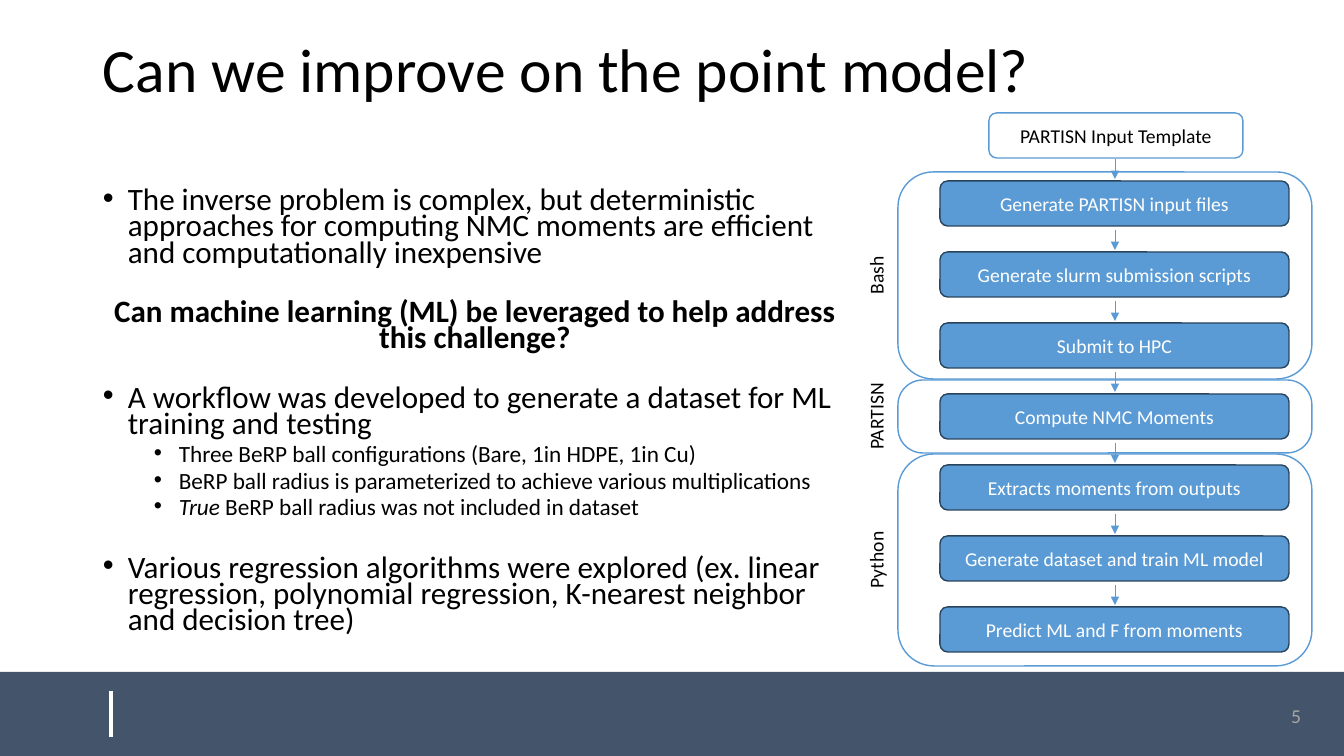
"""Build a slide on improving the point model, with bullets beside a workflow diagram."""
import lxml.etree
import pptx
import pptx.dml.color
import pptx.enum.shapes
import pptx.enum.text
import pptx.oxml.ns
import pptx.util

TITLE = "Can we improve on the point model?"
PAGE = "5"
POINT = dict(size=22.2, indent=25, bullet=True, spacing=0.7)
DETAIL = dict(size=16.6, indent=76, bullet=True, spacing=0.7, before=5)
QUESTION = dict(size=22.2, bold=True, align="CENTER", spacing=0.7, before=24)
BODY = [
    ("The inverse problem is complex, but deterministic approaches for computing "
     "NMC moments are efficient and computationally inexpensive", POINT),
    ("Can machine learning (ML) be leveraged to help address this challenge?", QUESTION),
    ("A workflow was developed to generate a dataset for ML training and testing",
     dict(POINT, before=24)),
    ("Three BeRP ball configurations (Bare, 1in HDPE, 1in Cu)", DETAIL),
    ("BeRP ball radius is parameterized to achieve various multiplications", DETAIL),
    (" BeRP ball radius was not included in dataset", dict(DETAIL, italic_lead="True")),
    ("Various regression algorithms were explored (ex. linear regression, "
     "polynomial regression, K-nearest neighbor and decision tree)",
     dict(POINT, before=27)),
]
TEMPLATE = "PARTISN Input Template"
STEPS = [
    "Generate PARTISN input files",
    "Generate slurm submission scripts",
    "Submit to HPC",
    "Compute NMC Moments",
    "Extracts moments from outputs",
    "Generate dataset and train ML model",
    "Predict ML and F from moments",
]
STAGES = [("Bash", 172, 207, 0.17), ("PARTISN", 380, 73, 0.34), ("Python", 454, 212, 0.17)]

FONT, BLACK, WHITE, BLUE, EDGE, SLATE, GRAY = (
    "Calibri", "000000", "FFFFFF", "5B9BD5", "28445D", "44546A", "A6A6A6")
WIDTH, HEIGHT = 1344, 756
STEP_LEFT, STEP_TOP, STEP_WIDTH, STEP_HEIGHT, STEP_PITCH = 940, 181, 349, 45, 71
STAGE_LEFT, STAGE_WIDTH = 898, 414
LABEL_CENTER, LABEL_WIDTH, LABEL_HEIGHT = 876, 108, 34
ARROW_X = STEP_LEFT + STEP_WIDTH // 2 + 1


def px(length):
    return pptx.util.Emu(round(length * 914400 / 100.8))


def rgb(value):
    return pptx.dml.color.RGBColor.from_string(value)


def write(frame, text, size=14, color=BLACK, bold=False, align="LEFT", spacing=1.0,
          before=0, indent=0, bullet=False, italic_lead="", new=False):
    paragraph = frame.add_paragraph() if new else frame.paragraphs[0]
    if bullet:
        properties = paragraph._p.get_or_add_pPr()
        properties.set("marL", str(px(indent)))
        properties.set("indent", str(-px(25)))
        for tag, key, value in (("a:buFont", "typeface", "Arial"), ("a:buChar", "char", "•")):
            lxml.etree.SubElement(properties, pptx.oxml.ns.qn(tag)).set(key, value)
    paragraph.alignment = getattr(pptx.enum.text.PP_ALIGN, align)
    paragraph.line_spacing = spacing
    if before:
        paragraph.space_before = pptx.util.Pt(before)
    for part, italic in ((italic_lead, True), (text, False)):
        if part:
            run = paragraph.add_run()
            run.text = part
            run.font.name = FONT
            run.font.size = pptx.util.Pt(size)
            run.font.bold = bold
            run.font.italic = italic
            run.font.color.rgb = rgb(color)


def add_box(slide, left, top, width, height, anchor="TOP"):
    box = slide.shapes.add_textbox(px(left), px(top), px(width), px(height))
    box.text_frame.word_wrap = True
    box.text_frame.vertical_anchor = getattr(pptx.enum.text.MSO_ANCHOR, anchor)
    return box


def add_panel(slide, left, top, width, height, fill=None, line=None, corner=0.17, text="",
              color=WHITE):
    kinds = pptx.enum.shapes.MSO_SHAPE
    kind = kinds.ROUNDED_RECTANGLE if corner else kinds.RECTANGLE
    panel = slide.shapes.add_shape(kind, px(left), px(top), px(width), px(height))
    panel.shadow.inherit = False
    if corner:
        panel.adjustments[0] = corner
    if fill:
        panel.fill.solid()
        panel.fill.fore_color.rgb = rgb(fill)
    else:
        panel.fill.background()
    if line:
        panel.line.color.rgb = rgb(line)
        panel.line.width = pptx.util.Pt(1)
    else:
        panel.line.fill.background()
    if text:
        panel.text_frame.word_wrap = True
        panel.text_frame.vertical_anchor = pptx.enum.text.MSO_ANCHOR.MIDDLE
        write(panel.text_frame, text, color=color, align="CENTER")


def add_line(slide, x, top, bottom, color, weight, arrow=False):
    line = slide.shapes.add_connector(
        pptx.enum.shapes.MSO_CONNECTOR.STRAIGHT, px(x), px(top), px(x), px(bottom))
    line.line.color.rgb = rgb(color)
    line.line.width = pptx.util.Pt(weight)
    if arrow:
        outline = line.line._get_or_add_ln()
        lxml.etree.SubElement(outline, pptx.oxml.ns.qn("a:tailEnd")).set("type", "triangle")
    lxml.etree.SubElement(line._element.spPr, pptx.oxml.ns.qn("a:effectLst"))


def add_text(slide):
    add_panel(slide, 0, 672, WIDTH, HEIGHT - 672, fill=SLATE, corner=0)
    add_line(slide, 111, 691, 737, WHITE, 3)
    write(add_box(slide, 1009, 699, 302, 40).text_frame, PAGE, color=GRAY, align="RIGHT")
    title = add_box(slide, 93, 0, 1251, 146, "MIDDLE")
    write(title.text_frame, TITLE, size=44, spacing=0.9)
    body = add_box(slide, 93, 185, 764, 480)
    for number, (text, style) in enumerate(BODY):
        write(body.text_frame, text, new=number > 0, **style)


def add_workflow(slide):
    add_panel(slide, 989, 113, 254, STEP_HEIGHT, WHITE, BLUE, text=TEMPLATE, color=BLACK)
    for number, step in enumerate(STEPS):
        top = STEP_TOP + number * STEP_PITCH
        add_panel(slide, STEP_LEFT, top, STEP_WIDTH, STEP_HEIGHT, BLUE, EDGE, text=step)
        add_line(slide, ARROW_X, top - 22, top - 2, BLUE, 0.5, arrow=True)
    for stage, top, height, corner in STAGES:
        add_panel(slide, STAGE_LEFT, top, STAGE_WIDTH, height, line=BLUE, corner=corner)
        label = add_box(slide, LABEL_CENTER - LABEL_WIDTH / 2,
                        top + (height - LABEL_HEIGHT) / 2, LABEL_WIDTH, LABEL_HEIGHT)
        label.rotation = 270
        write(label.text_frame, stage, align="CENTER")


def main():
    deck = pptx.Presentation()
    deck.slide_width, deck.slide_height = px(WIDTH), px(HEIGHT)
    slide = deck.slides.add_slide(deck.slide_layouts[6])
    add_text(slide)
    add_workflow(slide)
    deck.save("out.pptx")


if __name__ == "__main__":
    main()
